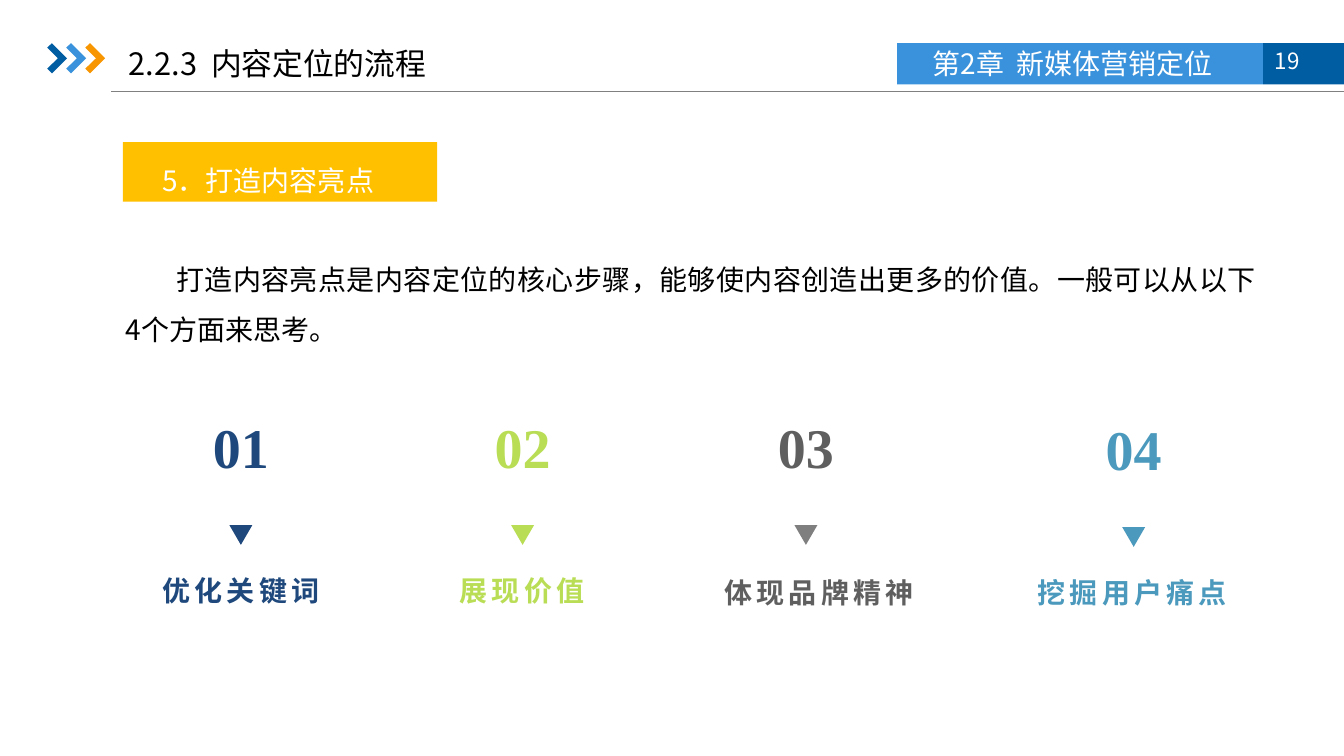
from lxml import etree
from pptx import Presentation
from pptx.dml.color import RGBColor
from pptx.enum.shapes import MSO_CONNECTOR, MSO_SHAPE
from pptx.enum.text import MSO_ANCHOR, MSO_AUTO_SIZE, PP_ALIGN
from pptx.oxml.ns import qn
from pptx.util import Cm, Pt

RECTANGLE, TRIANGLE = MSO_SHAPE.RECTANGLE, MSO_SHAPE.ISOSCELES_TRIANGLE
STRAIGHT = MSO_CONNECTOR.STRAIGHT
TOP, MIDDLE, BOTTOM = MSO_ANCHOR.TOP, MSO_ANCHOR.MIDDLE, MSO_ANCHOR.BOTTOM
LEFT, CENTER, JUSTIFY = PP_ALIGN.LEFT, PP_ALIGN.CENTER, PP_ALIGN.JUSTIFY
NO_FIT = MSO_AUTO_SIZE.NONE

CHINESE_FONT, NUMBER_FONT, LABEL_FONT = "Noto Sans CJK SC", "Times New Roman", "Arial"
COLORS = {
    "black": "000000", "white": "FFFFFF", "rule": "808080", "banner": "FFC000",
    "blue": "3992DB", "deep_blue": "005DA2", "orange": "F79600",
    "navy": "1F497D", "lime": "B9DD55", "gray": "5F5F5F", "mid_gray": "7F7F7F",
    "teal": "4B99BC",
}
TITLE = "2.2.3  内容定位的流程"
CHAPTER = "第2章  新媒体营销定位"
PAGE = "19"
HEADING = "5．打造内容亮点"
BODY = "打造内容亮点是内容定位的核心步骤，能够使内容创造出更多的价值。一般可以从以下4个方面来思考。"
ASPECTS = [
    {"label": "优化关键词", "color": "navy", "marker": "navy",
     "center": 6.07, "label_center": 6.07, "width": 4.78, "drop": 0, "label_drop": 0},
    {"label": "展现价值", "color": "lime", "marker": "lime",
     "center": 13.17, "label_center": 13.16, "width": 4.78, "drop": 0, "label_drop": 0},
    {"label": "体现品牌精神", "color": "gray", "marker": "mid_gray",
     "center": 20.31, "label_center": 20.64, "width": 5.51, "drop": 0, "label_drop": 0.05},
    {"label": "挖掘用户痛点", "color": "teal", "marker": "teal",
     "center": 28.57, "label_center": 28.54, "width": 5.87, "drop": 0.05, "label_drop": 0.05},
]
BARS = [("blue", 22.61, 9.22), ("deep_blue", 31.83, 2.04)]
CHEVRONS = ["deep_blue", "blue", "orange"]
CHEVRON_OUTLINE = [(0, 0.11), (0.12, 0), (0.5, 0.38), (0.12, 0.76), (0, 0.64), (0.27, 0.38)]
CHEVRON_LEFT, CHEVRON_STEP, HEADER_TOP = 1.19, 0.48, 1.09
SLIDE_WIDTH, SLIDE_HEIGHT = 33.87, 19.05
NUMBER_WIDTH, MARKER_WIDTH = 2.87, 0.58
DEFAULT_INSETS = (0.25, 0.13, 0.25, 0.13)
HEADER_INSETS = (0.33, 0.18, 0.33, 0.18)


def rgb(name):
    return RGBColor.from_string(COLORS[name])


def place(shape, left, top, width, height):
    shape.left, shape.top, shape.width, shape.height = map(Cm, (left, top, width, height))
    return shape


def paint(shape, color):
    shape.shadow.inherit = False
    shape.fill.solid()
    shape.fill.fore_color.rgb = rgb(color)
    shape.line.fill.background()
    return shape


def write(shape, text, size=20, color="black", font=CHINESE_FONT, bold=False, align=LEFT,
          anchor=TOP, insets=DEFAULT_INSETS, spacing=1.0, indent=0, tracking=0, wrap=True):
    frame = shape.text_frame
    frame.auto_size, frame.word_wrap, frame.vertical_anchor = NO_FIT, wrap, anchor
    frame.margin_left, frame.margin_top, frame.margin_right, frame.margin_bottom = map(Cm, insets)
    paragraph = frame.paragraphs[0]
    paragraph.alignment, paragraph.line_spacing = align, spacing
    paragraph.space_before = Pt(0)
    properties = paragraph._p.get_or_add_pPr()
    properties.set("marL", "0")
    properties.set("indent", str(int(Cm(indent))))
    etree.SubElement(properties, qn("a:buNone"))
    run = paragraph.add_run()
    run.text = text
    run.font.size, run.font.bold = Pt(size), bold
    run.font.color.rgb = rgb(color)
    run.font.name = font
    run_properties = run._r.get_or_add_rPr()
    run_properties.set("spc", str(tracking * 100))
    etree.SubElement(run_properties, qn("a:ea")).set("typeface", CHINESE_FONT)


def add_text(slide, box, text, **style):
    write(slide.shapes.add_textbox(*map(Cm, box)), text, **style)


def add_block(slide, kind, box, color):
    return paint(slide.shapes.add_shape(kind, *map(Cm, box)), color)


def add_header(slide):
    for color, left, width in BARS:
        add_block(slide, RECTANGLE, (left, HEADER_TOP, width, 1.04), color)
    rule = slide.shapes.add_connector(STRAIGHT, Cm(2.8), Cm(2.31), Cm(SLIDE_WIDTH), Cm(2.31))
    rule.line.color.rgb = rgb("rule")
    rule.line.width = Pt(0.75)
    etree.SubElement(rule._element.spPr, qn("a:effectLst"))
    for index, color in enumerate(CHEVRONS):
        left = CHEVRON_LEFT + index * CHEVRON_STEP
        points = [(Cm(left + x), Cm(HEADER_TOP + y)) for x, y in CHEVRON_OUTLINE]
        builder = slide.shapes.build_freeform(*points[0])
        builder.add_line_segments(points[1:], close=True)
        paint(builder.convert_to_shape(), color)
    add_text(slide, (32.13, 1.02, 1.6, 1.2), PAGE, size=16, color="white",
             insets=(0, 0.18, 0, 0.18))
    add_text(slide, (22.3, 1.04, 9.47, 1.09), CHAPTER, color="white", align=CENTER,
             anchor=MIDDLE, insets=HEADER_INSETS)


def add_aspect(slide, number, aspect):
    center, drop = aspect["center"], aspect["drop"]
    add_text(slide, (center - NUMBER_WIDTH / 2, 10.26 + drop, NUMBER_WIDTH, 2.84),
             f"{number:02}", size=40, color=aspect["color"], font=NUMBER_FONT, bold=True,
             align=CENTER, wrap=False)
    width = aspect["width"]
    add_text(slide, (aspect["label_center"] - width / 2, 13.82 + aspect["label_drop"], width, 1.47),
             aspect["label"], color=aspect["color"], font=LABEL_FONT, bold=True, align=CENTER,
             anchor=BOTTOM, insets=(0.25, 0.13, 0.25, 0), spacing=1.2, tracking=3)
    marker = add_block(slide, TRIANGLE,
                       (center - MARKER_WIDTH / 2, 13.23 + drop, MARKER_WIDTH, 0.5),
                       aspect["marker"])
    marker.rotation = 180


def main():
    presentation = Presentation()
    presentation.slide_width, presentation.slide_height = Cm(SLIDE_WIDTH), Cm(SLIDE_HEIGHT)
    slide = presentation.slides.add_slide(presentation.slide_layouts[1])
    add_header(slide)
    write(place(slide.shapes.title, 2.92, 1.04, 11.05, 1.09), TITLE, size=22,
          anchor=MIDDLE, insets=HEADER_INSETS)
    write(place(slide.placeholders[1], 2.92, 6.05, 28.98, 2.82), BODY,
          align=JUSTIFY, spacing=1.5, indent=1.27)
    banner = add_block(slide, RECTANGLE, (3.1, 3.58, 7.92, 1.5), "banner")
    write(banner, HEADING, color="white", anchor=MIDDLE, spacing=1.5, indent=0.74)
    for number, aspect in enumerate(ASPECTS, 1):
        add_aspect(slide, number, aspect)
    presentation.save("out.pptx")


if __name__ == "__main__":
    main()
